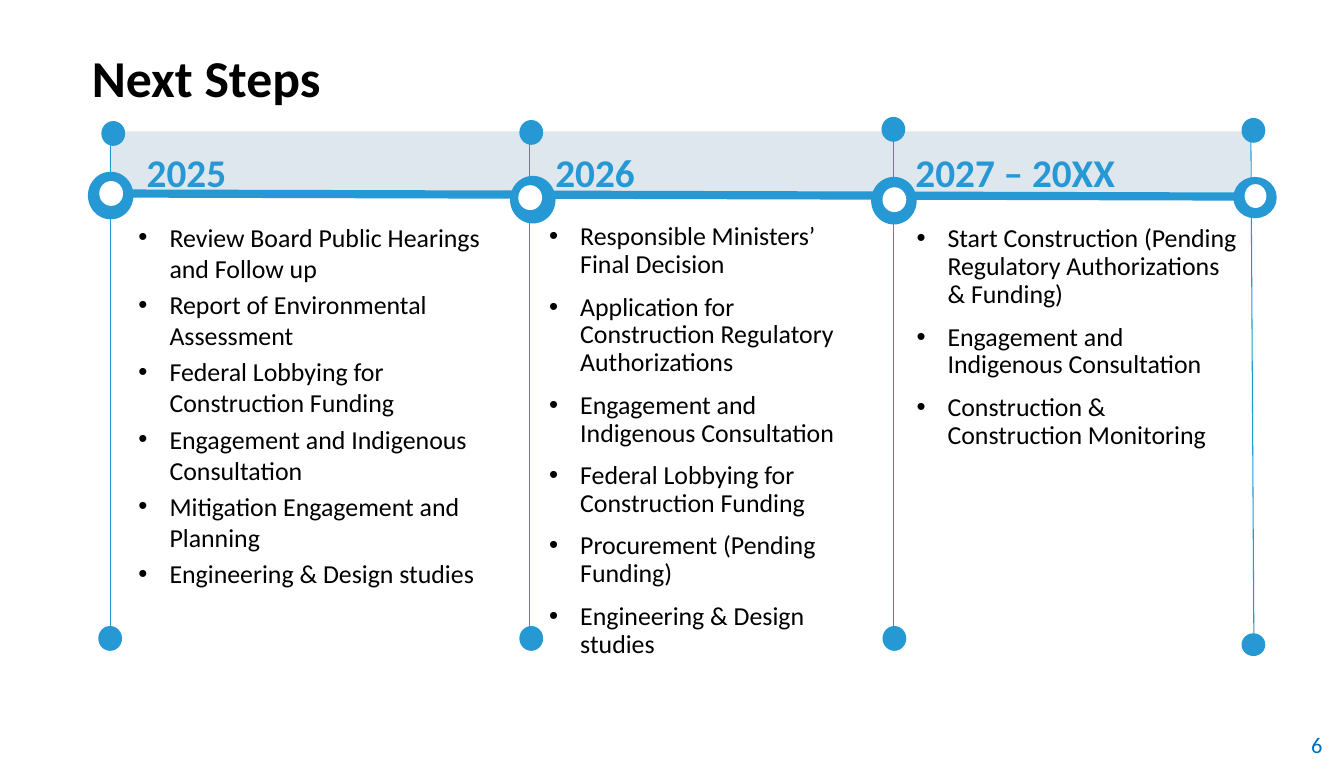
from dataclasses import dataclass
from typing import NamedTuple

from lxml.etree import SubElement
from pptx import Presentation
from pptx.dml.color import RGBColor
from pptx.enum.shapes import MSO_CONNECTOR as Line, MSO_SHAPE as Shape
from pptx.enum.text import MSO_ANCHOR as Anchor, PP_ALIGN as Align
from pptx.oxml.ns import qn
from pptx.util import Emu, Pt

PX = 9144  # EMU in one px, 100 px to the inch


@dataclass(frozen=True)
class Theme:
    font: str = "Calibri"
    ink: str = "000000"
    blue: str = "2699D5"
    stem: str = "2197D5"
    number: str = "0070C0"
    band: str = "DEE6EE"
    white: str = "FFFFFF"
    title_size: float = 36
    year_size: float = 27.3
    body_size: float = 18
    number_size: float = 15.6
    stem_width: float = 0.75
    axis_width: float = 5.7


class Box(NamedTuple):
    left: int
    top: int
    width: int
    height: int

    def inner(self, left, top, width, height):
        return Box(self.left + left, self.top + top, width, height)


THEME = Theme()
TIGHT = {"line_spacing": 0.9, "space_before": Pt(10)}
LOOSE = {"space_before": Pt(3.6)}
DOT, RING, HOLE = (23, 24), (44, 46), (23, 24)

# Year, body box, heading offset and width, paragraph format, steps
COLUMNS = [
    ("2025", Box(124, 209, 368, 49), 8, 284, LOOSE, [
        "Review Board Public Hearings and Follow up",
        "Report of Environmental Assessment",
        "Federal Lobbying for Construction Funding",
        "Engagement and Indigenous Consultation",
        "Mitigation Engagement and Planning",
        "Engineering & Design studies"]),
    ("2026", Box(521, 211, 314, 64), 6, 284, TIGHT, [
        "Responsible Ministers’ Final Decision",
        "Application for Construction Regulatory Authorizations",
        "Engagement and Indigenous Consultation",
        "Federal Lobbying for Construction Funding",
        "Procurement (Pending Funding)",
        "Engineering & Design studies"]),
    ("2027 – 20XX", Box(876, 213, 331, 64), -1, 371, TIGHT, [
        "Start Construction (Pending Regulatory Authorizations & Funding)",
        "Engagement and Indigenous Consultation",
        "Construction & Construction Monitoring"]),
]

# Stem box, then offset and size of top dot, bottom dot, ring and hole
MILESTONES = [
    (Box(107, 120, 0, 501),
     [(-9, -3, *DOT), (-12, 485, *DOT), (-22, 46, *RING), (-11, 55, *HOLE)]),
    (Box(512, 119, 0, 501),
     [(-10, -3, *DOT), (-10, 486, *DOT), (-19, 51, *RING), (-11, 60, *HOLE)]),
    (Box(864, 122, 0, 494),
     [(-12, -9, *DOT), (-11, 483, *DOT), (-22, 49, *RING), (-11, 59, *HOLE)]),
    (Box(1209, 125, 3, 503),
     [(-9, -11, *DOT), (-9, 487, 23, 22), (-17, 46, 42, 40), (-6, 53, 21, 23)]),
]


def emu(lengths):
    return [Emu(length * PX) for length in lengths]


def add_solid(page, kind, box, color):
    solid = page.shapes.add_shape(kind, *emu(box))
    solid.shadow.inherit = False
    solid.fill.solid()
    solid.fill.fore_color.rgb = RGBColor.from_string(color)
    solid.line.fill.background()


def add_line(page, box, color, width):
    ends = (box.left, box.top, box.left + box.width, box.top + box.height)
    line = page.shapes.add_connector(Line.STRAIGHT, *emu(ends))
    line.line.color.rgb = RGBColor.from_string(color)
    line.line.width = Pt(width)
    SubElement(line._element.spPr, qn("a:effectLst"))


def add_bullet(para):
    properties = para._p.get_or_add_pPr()
    properties.set("marL", str(30 * PX))
    properties.set("indent", str(-30 * PX))
    SubElement(properties, qn("a:buFont")).set("typeface", "Arial")
    SubElement(properties, qn("a:buChar")).set("char", "•")


def add_text(page, box, lines, color, size, bold=False, anchor=Anchor.TOP,
             bullets=False, align=Align.LEFT, spacing=None):
    frame = page.shapes.add_textbox(*emu(box)).text_frame
    frame.word_wrap = True
    frame.vertical_anchor = anchor
    for index, line in enumerate(lines):
        para = frame.add_paragraph() if index else frame.paragraphs[0]
        if bullets:
            add_bullet(para)
        for name, value in {"alignment": align, **(spacing or {})}.items():
            if index or name != "space_before":
                setattr(para, name, value)
        span = para.add_run()
        span.text = line
        font_format = {"name": THEME.font, "size": Pt(size), "bold": bold}
        for name, value in font_format.items():
            setattr(span.font, name, value)
        span.font.color.rgb = RGBColor.from_string(color)


def draw_column(page, box, year, shift, width, spacing, steps):
    heading = Box(box.left + shift, 138, width, 78)
    add_text(page, heading, [year], THEME.blue, THEME.year_size, bold=True)
    add_text(page, box, steps, THEME.ink, THEME.body_size,
             bullets=True, spacing=spacing)


def draw_milestone(page, box, parts):
    add_line(page, box, THEME.stem, THEME.stem_width)
    colors = [THEME.blue] * 3 + [THEME.white]
    for part, color in zip(parts, colors):
        add_solid(page, Shape.OVAL, box.inner(*part), color)


def draw_timeline(page, box):
    # Band behind the years
    add_solid(page, Shape.RECTANGLE, box, THEME.band)
    # Years and their steps
    for year, body, shift, width, spacing, steps in COLUMNS:
        draw_column(page, body, year, shift, width, spacing, steps)
    # Axis with its milestones
    add_line(page, box.inner(-10, 60, 1129, 3), THEME.blue, THEME.axis_width)
    for stem, parts in MILESTONES:
        draw_milestone(page, stem, parts)


def draw_frame(page, box):
    # Title and page number
    add_text(page, box.inner(79, 12, 1169, 125), ["Next Steps"], THEME.ink,
             THEME.title_size, bold=True, anchor=Anchor.MIDDLE)
    add_text(page, box.inner(985, 700, 303, 40), ["6"], THEME.number,
             THEME.number_size, anchor=Anchor.MIDDLE, align=Align.RIGHT)


def main():
    deck = Presentation()
    whole = Box(0, 0, 1299, 748)
    deck.slide_width, deck.slide_height = emu(whole[2:])
    page = deck.slides.add_slide(deck.slide_layouts[6])
    draw_frame(page, whole)
    draw_timeline(page, Box(106, 127, 1102, 63))
    deck.save("out.pptx")


if __name__ == "__main__":
    main()
